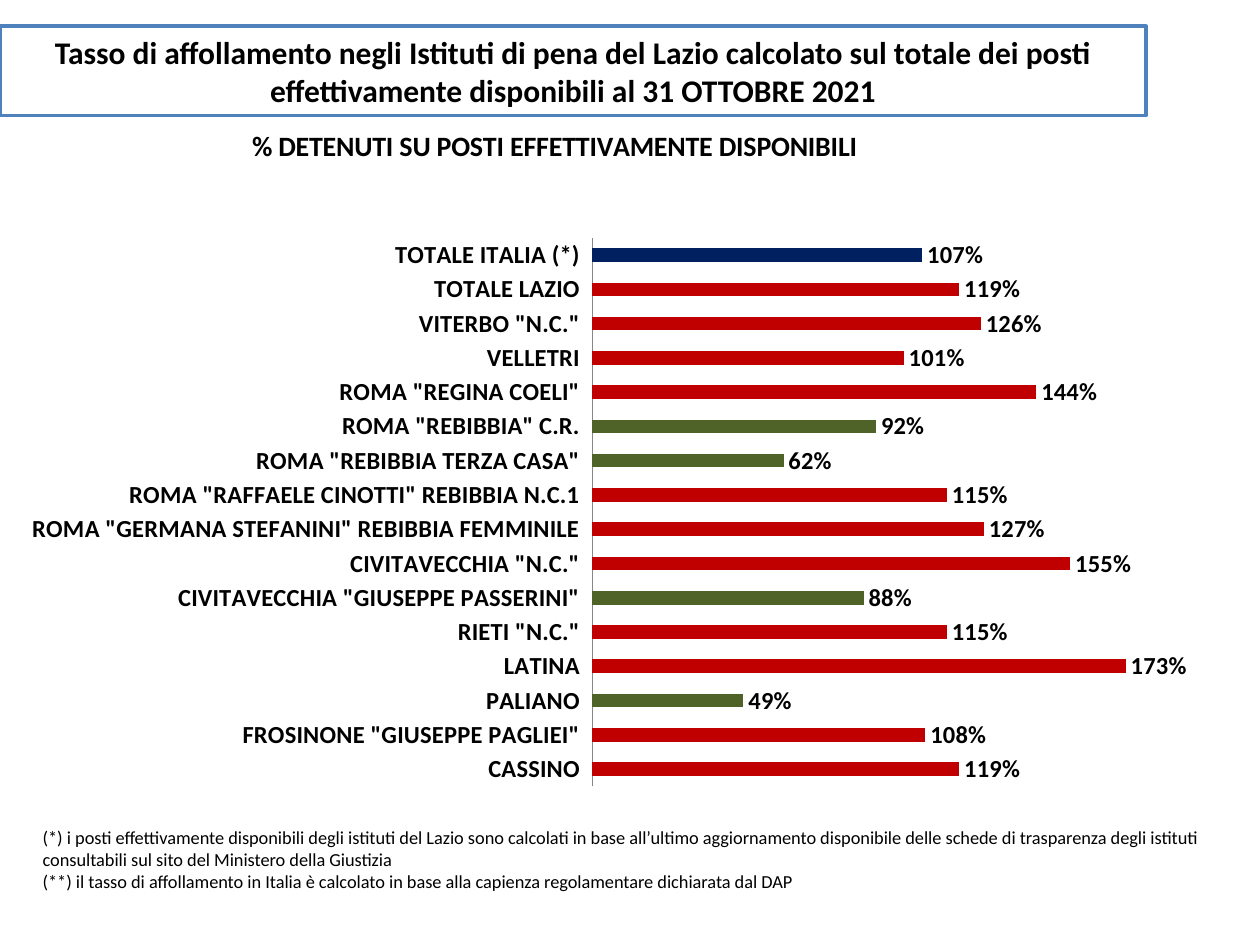
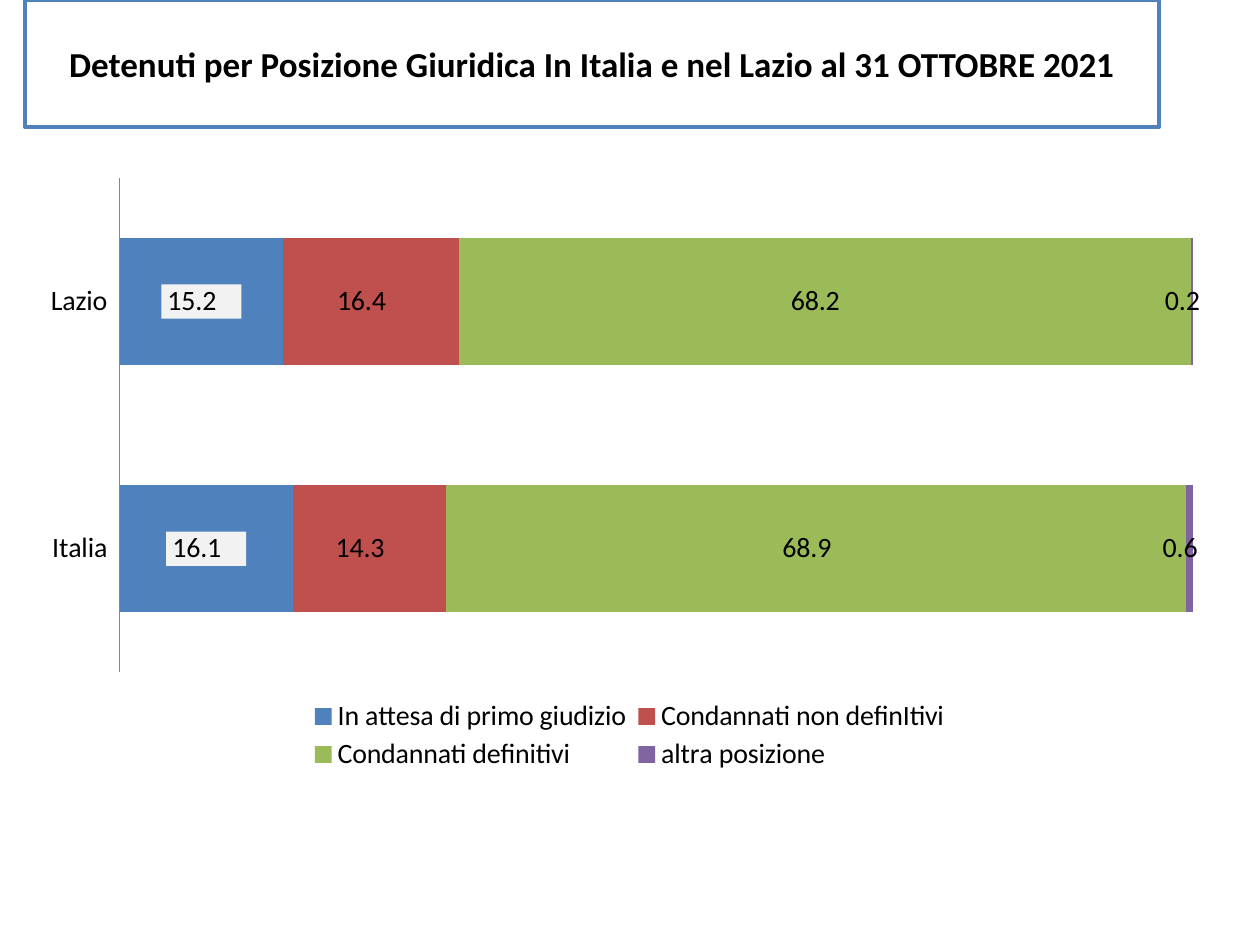
from lxml import etree
from pptx import Presentation
from pptx.chart.data import CategoryChartData
from pptx.dml.color import RGBColor
from pptx.enum.chart import XL_CHART_TYPE as ChartType, XL_LABEL_POSITION as LabelPos
from pptx.enum.chart import XL_LEGEND_POSITION as LegendPos, XL_TICK_MARK as Tick
from pptx.enum.chart import XL_TICK_LABEL_POSITION as TickLabel
from pptx.enum.shapes import MSO_SHAPE as Shape
from pptx.enum.text import MSO_ANCHOR as Anchor, PP_ALIGN as Align
from pptx.oxml import parse_xml
from pptx.oxml.ns import nsdecls, qn
from pptx.util import Pt

FONT = "Calibri"
BLACK = RGBColor(0x00, 0x00, 0x00)
WHITE = RGBColor(0xFF, 0xFF, 0xFF)
BLUE = RGBColor(0x4F, 0x81, 0xBD)
RED = RGBColor(0xC0, 0x50, 0x4D)
GREEN = RGBColor(0x9B, 0xBB, 0x59)
PURPLE = RGBColor(0x80, 0x64, 0xA2)
GREY = RGBColor(0x86, 0x86, 0x86)
CROWDED = RGBColor(0xC0, 0x00, 0x00)
UNCROWDED = RGBColor(0x4F, 0x62, 0x28)
NATIONAL = RGBColor(0x00, 0x20, 0x60)
LABEL_FILL = "F2F2F2"

CROWDING_TITLE = ("Tasso di affollamento negli Istituti di pena del Lazio calcolato sul totale "
                  "dei posti effettivamente disponibili al 31 OTTOBRE 2021")
CROWDING_HEADING = "% DETENUTI SU POSTI EFFETTIVAMENTE DISPONIBILI"
CROWDING = [
    ("CASSINO", 1.19),
    ('FROSINONE "GIUSEPPE PAGLIEI"', 1.08),
    ("PALIANO", 0.49),
    ("LATINA", 1.73),
    ('RIETI "N.C."', 1.15),
    ('CIVITAVECCHIA "GIUSEPPE PASSERINI"', 0.88),
    ('CIVITAVECCHIA "N.C."', 1.55),
    ('ROMA "GERMANA STEFANINI" REBIBBIA FEMMINILE', 1.27),
    ('ROMA "RAFFAELE CINOTTI" REBIBBIA N.C.1', 1.15),
    ('ROMA "REBIBBIA TERZA CASA"', 0.62),
    ('ROMA "REBIBBIA" C.R.', 0.92),
    ('ROMA "REGINA COELI"', 1.44),
    ("VELLETRI", 1.01),
    ('VITERBO "N.C."', 1.26),
    ("TOTALE LAZIO", 1.19),
    ("TOTALE ITALIA (*)", 1.07),
]
NOTES = [
    "(*) i posti effettivamente disponibili degli istituti del Lazio sono calcolati in base "
    "all’ultimo aggiornamento disponibile delle schede di trasparenza degli istituti "
    "consultabili sul sito del Ministero della Giustizia",
    "(**) il tasso di affollamento in Italia è calcolato in base alla capienza regolamentare "
    "dichiarata dal DAP",
]

POSITION_TITLE = "Detenuti per Posizione Giuridica In Italia e nel Lazio al 31 OTTOBRE 2021"
REGIONS = ["Lazio", "Italia"]
POSITIONS = [
    ("In attesa di primo giudizio", (15.2, 16.1), BLUE),
    ("Condannati non definItivi", (16.4, 14.3), RED),
    ("Condannati definitivi", (68.2, 68.9), GREEN),
    ("altra posizione", (0.2, 0.6), PURPLE),
]
DECIMAL = r'_-* #,##0.0\ _€_-;\-* #,##0.0\ _€_-;_-* "-"??\ _€_-;_-@_-'


def set_font(font, size, bold=False):
    font.name, font.size, font.bold = FONT, Pt(size), bold
    font.color.rgb = BLACK


def add_title(slide, text, box, size):
    sp = slide.shapes.add_shape(Shape.RECTANGLE, *map(Pt, box))
    sp.shadow.inherit = False
    sp.fill.solid()
    sp.fill.fore_color.rgb = WHITE
    sp.line.color.rgb = BLUE
    sp.line.width = Pt(2)
    tf = sp.text_frame
    tf.word_wrap = True
    tf.vertical_anchor = Anchor.MIDDLE
    p = tf.paragraphs[0]
    p.text = text
    p.alignment = Align.CENTER
    set_font(p.font, size, True)


def add_notes(slide, notes, box):
    tf = slide.shapes.add_textbox(*map(Pt, box)).text_frame
    tf.word_wrap = True
    for i, note in enumerate(notes):
        p = tf.add_paragraph() if i else tf.paragraphs[0]
        p.text = note
        set_font(p.font, 10.5)


def place(chart, part, index, inner=False, **fractions):
    parent = chart.element.xpath(f"c:chart/{part}")[0]
    for old in parent.findall(qn("c:layout")):
        parent.remove(old)
    layout = parse_xml(f"<c:layout {nsdecls('c')}><c:manualLayout/></c:layout>")
    settings = {"layoutTarget": "inner"} if inner else {}
    settings |= {"xMode": "edge", "yMode": "edge"} | fractions
    for tag, value in settings.items():
        etree.SubElement(layout[0], qn(f"c:{tag}")).set("val", str(value))
    parent.insert(index, layout)


def add_bars(slide, kind, box, categories, series, size, bold, gap, number_format):
    data = CategoryChartData()
    data.categories = categories
    for name, values, color in series:
        data.add_series(name, values)
    chart = slide.shapes.add_chart(kind, *map(Pt, box), data).chart
    set_font(chart.font, size, bold)
    chart.has_title = chart.has_legend = False
    axis = chart.category_axis
    axis.major_tick_mark = axis.minor_tick_mark = Tick.NONE
    axis.tick_label_position = TickLabel.LOW
    axis.format.line.color.rgb = GREY
    chart.value_axis.visible = False
    chart.value_axis.has_major_gridlines = False
    chart.value_axis.minimum_scale = 0
    plot = chart.plots[0]
    plot.vary_by_categories = False
    plot.gap_width = gap
    for bars, (name, values, color) in zip(plot.series, series):
        bars.format.fill.solid()
        bars.format.fill.fore_color.rgb = color
        bars.invert_if_negative = False
        labels = bars.data_labels
        labels.show_value = True
        labels.number_format = number_format
        labels.number_format_is_linked = False
        set_font(labels.font, size, bold)
    return chart


def build_crowding(slide):
    add_title(slide, CROWDING_TITLE, (0, 15, 655, 51), 18)
    add_notes(slide, NOTES, (17.3, 468.7, 702.7, 45.4))
    names, rates = zip(*CROWDING)
    chart = add_bars(slide, ChartType.BAR_CLUSTERED, (8.6, 65.5, 697.7, 391.7), names,
                     [("Affollamento", rates, CROWDED)], 14, True, 150, "0%")
    bars = chart.plots[0].series[0]
    bars.data_labels.position = LabelPos.OUTSIDE_END
    special = {i: UNCROWDED for i, rate in enumerate(rates) if rate < 1}
    special[len(rates) - 1] = NATIONAL
    for i, color in special.items():
        fill = bars.points[i].format.fill
        fill.solid()
        fill.fore_color.rgb = color
    chart.value_axis.maximum_scale = 2
    chart.has_title = True
    p = chart.chart_title.text_frame.paragraphs[0]
    p.text = CROWDING_HEADING
    set_font(p.font, 16, True)
    chart.chart_title.include_in_layout = False
    place(chart, "c:title", 1, x=0.19, y=0.01)
    place(chart, "c:plotArea", 0, True, x=0.473, y=0.18, w=0.505, h=0.8)


def build_positions(slide):
    add_title(slide, POSITION_TITLE, (14.4, 0, 648, 72.7), 20)
    chart = add_bars(slide, ChartType.BAR_STACKED_100, (20.2, 94.3, 679.7, 350.6), REGIONS,
                     POSITIONS, 16, False, 95, DECIMAL)
    chart.plots[0].overlap = 100
    chart.category_axis.reverse_order = True
    chart.value_axis.maximum_scale = 1
    chart.has_legend = True
    chart.legend.position = LegendPos.BOTTOM
    chart.legend.include_in_layout = False
    set_font(chart.legend.font, 16)
    number_format = chart.element.xpath(".//c:ser[1]/c:dLbls/c:numFmt")[0]
    number_format.addnext(parse_xml(
        f'<c:spPr {nsdecls("c", "a")}><a:solidFill><a:srgbClr val="{LABEL_FILL}"/>'
        "</a:solidFill></c:spPr>"))
    place(chart, "c:plotArea", 0, True, x=0.071, y=0.021, w=0.903, h=0.806)
    place(chart, "c:legend", 1, x=0.225, y=0.865, w=0.55, h=0.13)


def main():
    prs = Presentation()
    prs.slide_width, prs.slide_height = Pt(720), Pt(540)
    for build in (build_crowding, build_positions):
        build(prs.slides.add_slide(prs.slide_layouts[6]))
    prs.save("out.pptx")


if __name__ == "__main__":
    main()
